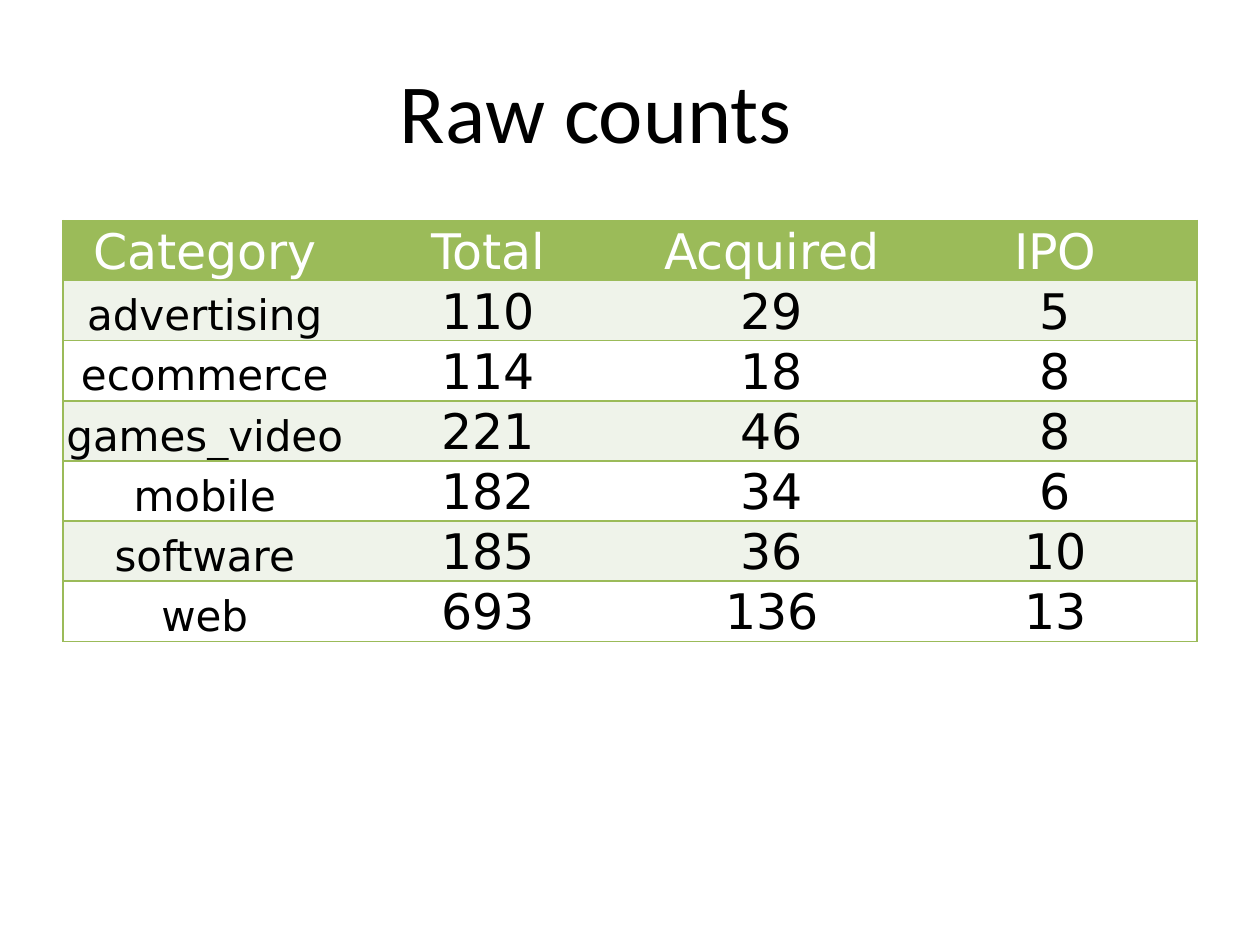
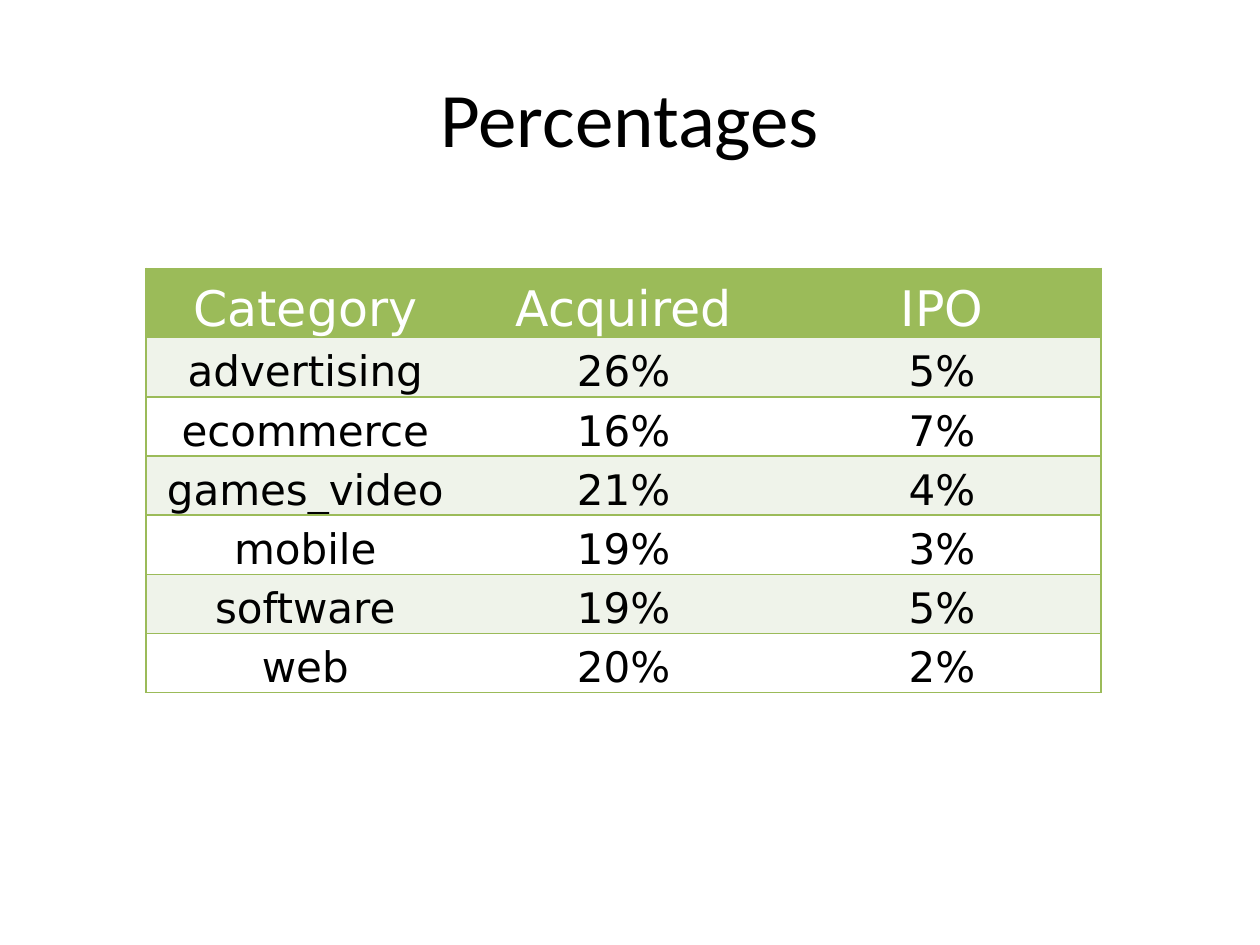
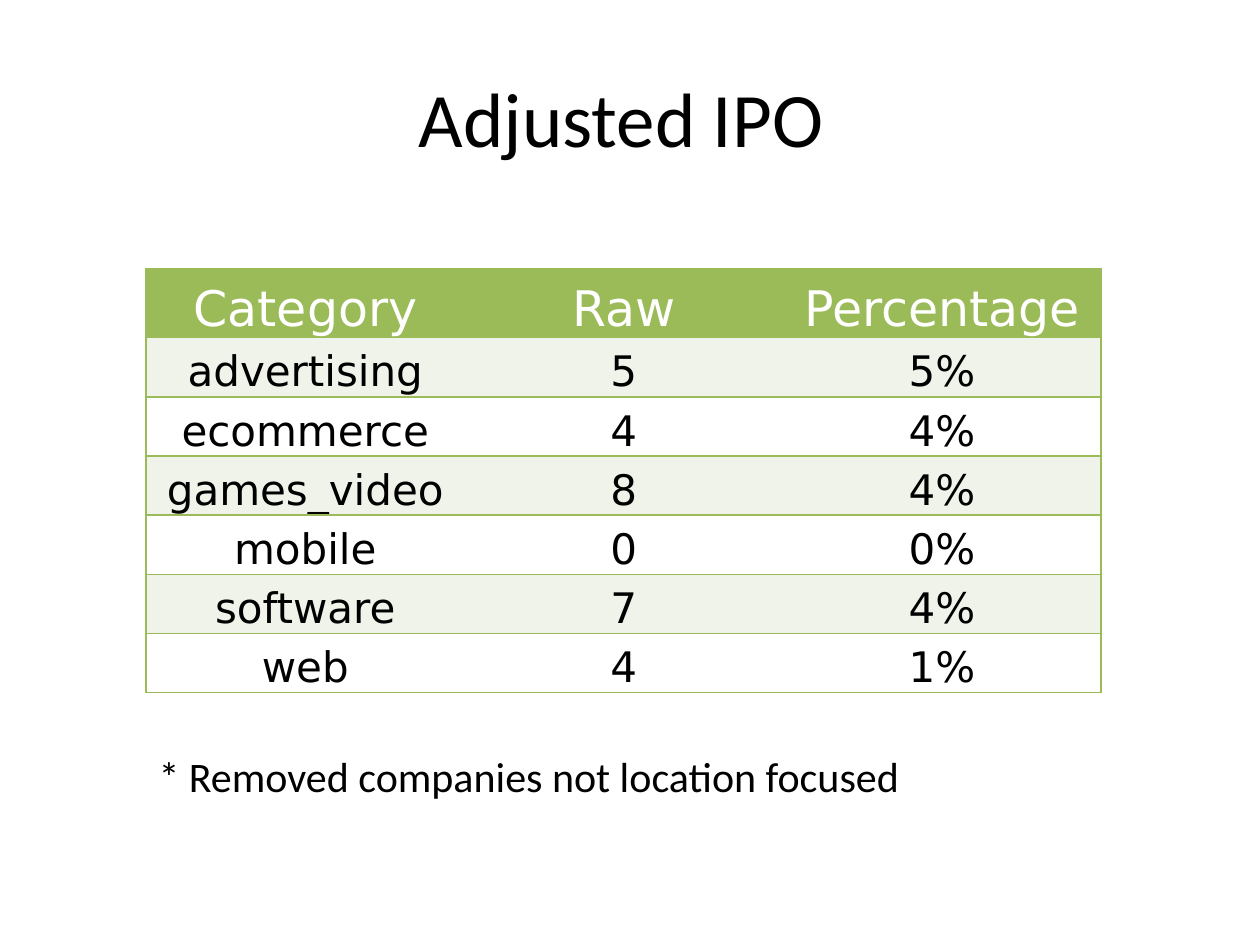
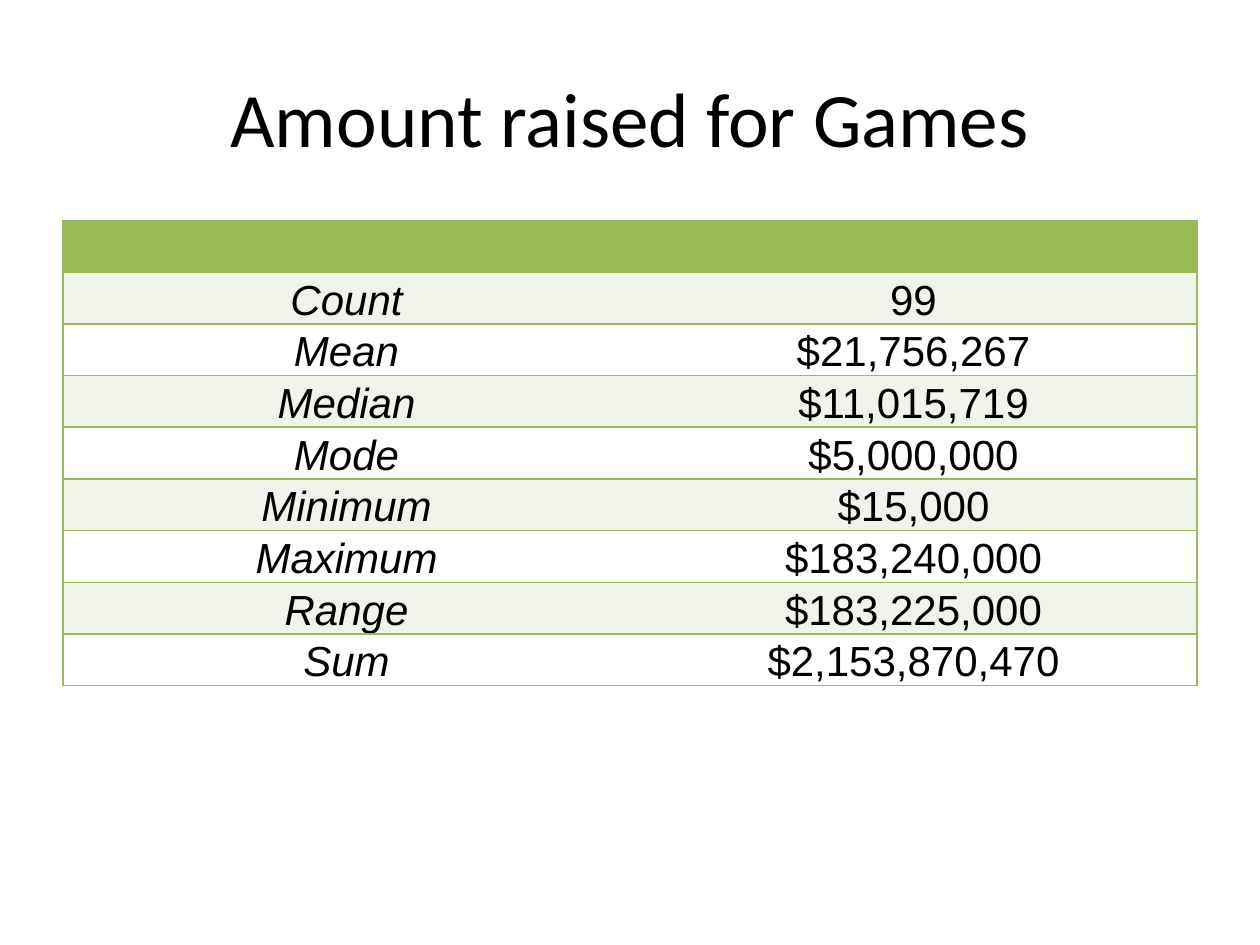
from pptx import Presentation
from pptx.dml.color import RGBColor as Rgb
from pptx.enum.text import MSO_ANCHOR as Anchor, PP_ALIGN as Align
from pptx.oxml.ns import qn
from pptx.util import Inches, Pt
from lxml.etree import SubElement as Sub

GREEN, PALE, WHITE, BLACK = "9BBB59", "EFF3EA", "FFFFFF", "000000"
PLAIN = "{2D5ABB26-0587-4C30-8999-92F81FD0307C}"
TITLE = {"box": (0.5, 0.3, 9, 1.25), "size": 44, "anchor": Anchor.MIDDLE}
WIDE = {"left": 0.5, "top": 1.75, "width": 9, "head": 0.41, "row": 0.41}
SLIM = {"left": 1.16, "top": 2.13, "width": 7.58, "head": 0.55, "row": 0.47,
        "tall": 3.37, "font": "DejaVu Sans", "size": 24}
KINDS = ["advertising", "ecommerce", "games_video", "mobile", "software", "web"]

pages = [
    {"title": "Raw counts",
     "style": {"box": (1.46, 0.42, 6.54, 0.91), "size": 48, "anchor": Anchor.TOP},
     "grid": {**WIDE, "tall": 3.36, "font": "DejaVu Sans", "size": 28},
     "rows": [("Category", "Total", "Acquired", "IPO"),
              *zip(KINDS, (110, 114, 221, 182, 185, 693),
                   (29, 18, 46, 34, 36, 136), (5, 8, 8, 6, 10, 13))]},
    {"title": "Percentages", "style": TITLE, "grid": SLIM,
     "rows": [("Category", "Acquired", "IPO"),
              *zip(KINDS, ("26%", "16%", "21%", "19%", "19%", "20%"),
                   ("5%", "7%", "4%", "3%", "5%", "2%"))]},
    {"title": "Adjusted IPO ", "style": TITLE, "grid": SLIM,
     "rows": [("Category", "Raw", "Percentage"),
              *zip(KINDS, (5, 4, 8, 0, 7, 4),
                   ("5%", "4%", "4%", "0%", "4%", "1%"))],
     "note": "* Removed companies not location focused"},
    {"title": "Amount raised for Games", "style": TITLE,
     "grid": {**WIDE, "tall": 3.72, "font": "Arial", "size": 24, "slant": True},
     "rows": [("", ""), ("Count", "99"), ("Mean", "$21,756,267"),
              ("Median", "$11,015,719"), ("Mode", "$5,000,000"),
              ("Minimum", "$15,000"), ("Maximum", "$183,240,000"),
              ("Range", "$183,225,000"), ("Sum", "$2,153,870,470")]},
]


def write(frame, text, align, color, **font):
    para = frame.paragraphs[0]
    para.alignment = align
    if text:
        run = para.add_run()
        run.text = text
        run.font.color.rgb = Rgb.from_string(color)
        for key, value in font.items():
            setattr(run.font, key, value)


def label(slide, text, box, size, anchor, align):
    frame = slide.shapes.add_textbox(*map(Inches, box)).text_frame
    frame.word_wrap = True
    frame.vertical_anchor = anchor
    write(frame, text, align, BLACK, name="Calibri", size=Pt(size))


deck = Presentation()
deck.slide_width, deck.slide_height = Inches(10), Inches(7.5)

for page in pages:
    slide = deck.slides.add_slide(deck.slide_layouts[6])
    label(slide, page["title"], align=Align.CENTER, **page["style"])
    grid, rows = page["grid"], page["rows"]
    count = len(rows[0])
    shape = slide.shapes.add_table(
        len(rows), count,
        *[Inches(grid[key]) for key in ("left", "top", "width", "tall")])
    table = shape.table
    table.horz_banding = False
    table._tbl.tblPr.find(qn("a:tableStyleId")).text = PLAIN
    for r, row in enumerate(rows):
        table.rows[r].height = Inches(grid["row"] if r else grid["head"])
        for c, value in enumerate(row):
            cell = table.cell(r, c)
            form = {"margin_left": Inches(0.01), "margin_right": Inches(0.01),
                    "margin_top": Inches(0.01), "margin_bottom": 0,
                    "vertical_anchor": Anchor.BOTTOM}
            for key, item in form.items():
                setattr(cell, key, item)
            sides = {"L": c == 0, "R": c == count - 1, "T": True, "B": True}
            for side, shown in sides.items():
                if shown:
                    line = Sub(cell._tc.get_or_add_tcPr(), qn("a:ln" + side), w=str(Pt(1)))
                    Sub(Sub(line, qn("a:solidFill")), qn("a:srgbClr"), val=GREEN)
            cell.fill.solid()
            shade = (WHITE, PALE)[r % 2] if r else GREEN
            cell.fill.fore_color.rgb = Rgb.from_string(shade)
            size = 28 if r == 0 else 24 if c == 0 else grid["size"]
            write(cell.text_frame, str(value), Align.CENTER, BLACK if r else WHITE,
                  name=grid["font"], size=Pt(size),
                  italic=c == 0 and grid.get("slant", False))
    shape.height = Inches(grid["tall"])
    if "note" in page:
        label(slide, page["note"], (1.16, 5.91, 7.58, 0.5), 24, Anchor.TOP, Align.LEFT)

deck.save("out.pptx")
